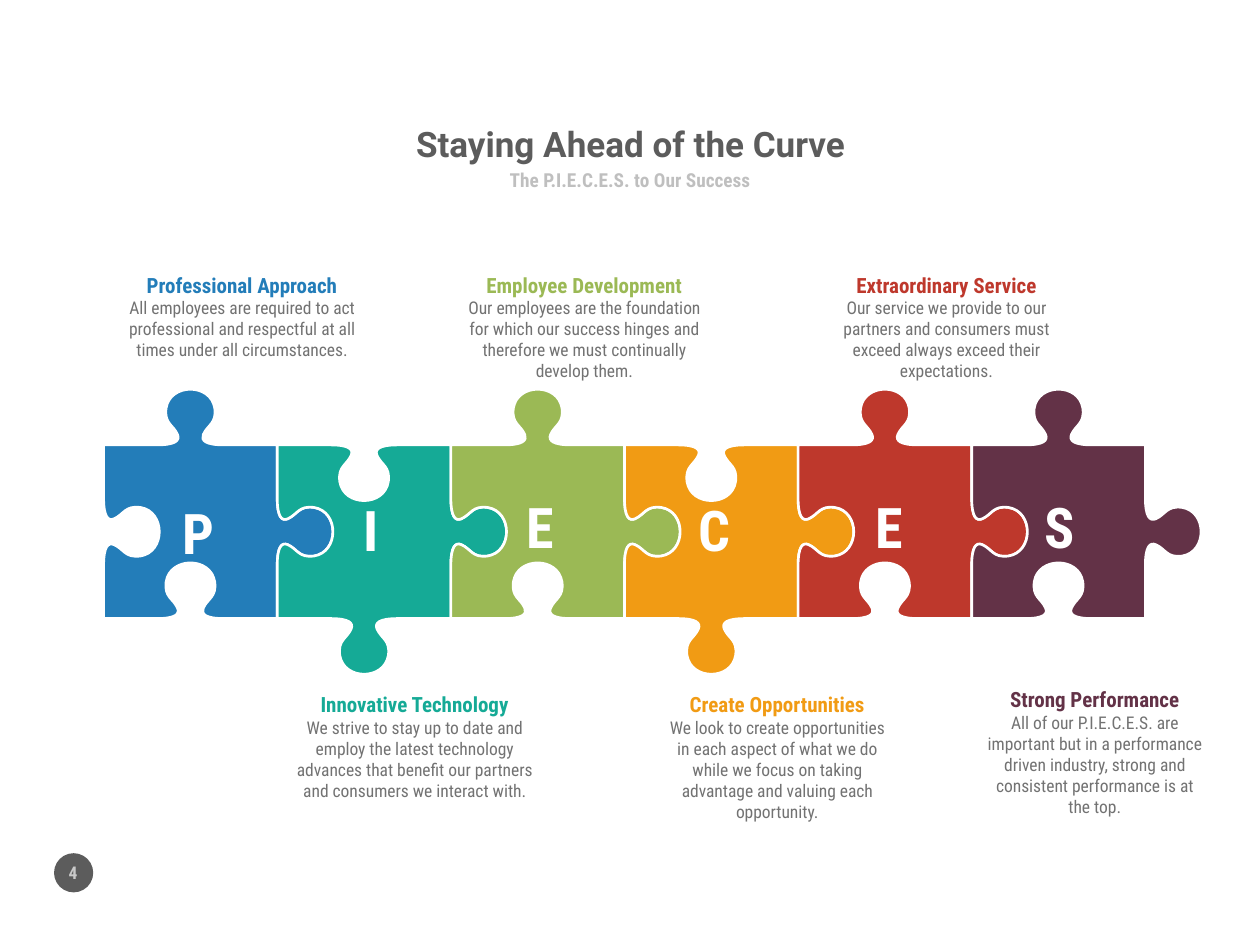
from pptx import Presentation
from pptx.dml.color import RGBColor
from pptx.enum.shapes import MSO_SHAPE
from pptx.enum.text import MSO_ANCHOR, PP_ALIGN
from pptx.oxml.ns import qn
from pptx.util import Cm, Pt

OVAL = MSO_SHAPE.OVAL
CENTER = PP_ALIGN.CENTER
TOP, MIDDLE, BOTTOM = MSO_ANCHOR.TOP, MSO_ANCHOR.MIDDLE, MSO_ANCHOR.BOTTOM

COLORS = {
    "blue": "237DB9", "teal": "15AA96", "green": "9BB955",
    "orange": "F19B14", "red": "BE382C", "plum": "633247",
    "white": "FFFFFF", "title": "5C5C5C", "subtitle": "BFBFBF",
    "body": "727272", "page": "C9C9C9",
}
TITLE_FONT, TEXT_FONT = "Roboto", "Roboto Condensed"

TITLE = "Staying Ahead of the Curve"
SUBTITLE = "The P.I.E.C.E.S. to Our Success"
PAGE = "4"

# letter, colour, knob direction (1 up, -1 down), letter box (left, top),
# caption box (left, top, width, height), heading, description
PIECES = [
    ("P", "blue", 1, (3.61, 10.03), (2.11, 5.36, 5.54, 2.49),
     "Professional Approach",
     "All employees are required to act professional and respectful at all "
     "times under all circumstances."),
    ("I", "teal", -1, (7.09, 9.98), (5.59, 13.82, 5.54, 2.9),
     "Innovative Technology",
     "We strive to stay up to date and employ the latest technology advances "
     "that benefit our partners and consumers we interact with."),
    ("E", "green", 1, (10.5, 9.91), (9.09, 5.36, 5.38, 2.9),
     "Employee Development",
     "Our employees are the foundation for which our success hinges and "
     "therefore we must continually develop them."),
    ("C", "orange", -1, (14, 9.98), (13.18, 13.82, 4.98, 3.33),
     "Create Opportunities",
     "We look to create opportunities in each aspect of what we do while we "
     "focus on taking advantage and valuing each opportunity."),
    ("E", "red", 1, (17.53, 9.91), (16.59, 5.36, 4.98, 2.49),
     "Extraordinary Service",
     "Our service we provide to our partners and consumers must exceed always "
     "exceed their expectations."),
    ("S", "plum", 1, (20.96, 9.91), (19.58, 13.72, 4.98, 2.9),
     "Strong Performance",
     "All of our P.I.E.C.E.S. are important but in a performance driven "
     "industry, strong and consistent performance is at the top."),
]

ROW_LEFT, ROW_TOP, SIDE = 2.09, 8.97, 3.5
LETTER_SIZE = (0.8, 1.37)

# First half of a knob as (distance along the side, height above it): the
# start, two curves of three points each, and the first control of the head
HALF_KNOB = [
    (1.07, 0),
    (1.45, 0), (1.54, 0.09), (1.49, 0.21),
    (1.4, 0.41), (1.22, 0.43), (1.26, 0.74),
    (1.34, 1.25),
]
KNOB = HALF_KNOB + [(SIDE - along, height) for along, height in reversed(HALF_KNOB)]
EDGE = KNOB + [(SIDE, 0)]


def color(name):
    return RGBColor.from_string(COLORS[name])


def bend_knobs(piece):
    """Turn the straight segments of every knob into cubic curves."""
    segments = list(piece._element.iter(qn("a:lnTo")))
    for first in range(0, len(segments), len(EDGE)):
        knob = segments[first + 1:first + len(KNOB)]
        for start in range(0, len(knob), 3):
            curve, *others = knob[start:start + 3]
            bend = curve.makeelement(qn("a:cubicBezTo"))
            curve.addprevious(bend)
            for segment in (curve, *others):
                bend.append(segment[0])
                segment.getparent().remove(segment)


def add_piece(slide, left, direction, fill):
    outline = [(a, -direction * h) for a, h in EDGE]
    outline += [(SIDE + h, a) for a, h in EDGE]
    outline += [(SIDE - a, SIDE - direction * h) for a, h in EDGE]
    outline += [(h, SIDE - a) for a, h in EDGE]
    points = [(Cm(left + x), Cm(ROW_TOP + y)) for x, y in outline]
    builder = slide.shapes.build_freeform(Cm(left), Cm(ROW_TOP))
    builder.add_line_segments(points, close=True)
    piece = builder.convert_to_shape()
    bend_knobs(piece)
    piece.shadow.inherit = False
    piece.fill.solid()
    piece.fill.fore_color.rgb = color(fill)
    piece.line.color.rgb = color("white")
    piece.line.width = Pt(1.5)


def add_text(slide, box, lines, anchor=MIDDLE, wrap=False, inset=None):
    """Each line is (text, size, colour, bold, font) in its own paragraph."""
    frame = slide.shapes.add_textbox(*map(Cm, box)).text_frame
    frame.word_wrap = wrap
    frame.vertical_anchor = anchor
    if inset is not None:
        frame.margin_left = frame.margin_right = Cm(inset)
        frame.margin_top = frame.margin_bottom = Cm(inset)
    for index, (text, size, tint, bold, font) in enumerate(lines):
        paragraph = frame.add_paragraph() if index else frame.paragraphs[0]
        paragraph.alignment = CENTER
        run = paragraph.add_run()
        run.text = text
        run.font.name = font
        run.font.size = Pt(size)
        run.font.bold = bold
        run.font.color.rgb = color(tint)


def main():
    deck = Presentation()
    deck.slide_width, deck.slide_height = Cm(25.4), Cm(19.05)
    slide = deck.slides.add_slide(deck.slide_layouts[6])

    badge = slide.shapes.add_shape(OVAL, Cm(1.09), Cm(17.2), Cm(0.79), Cm(0.79))
    badge.shadow.inherit = False
    badge.fill.solid()
    badge.fill.fore_color.rgb = color("title")
    badge.line.fill.background()

    add_text(slide, (4.88, 2.39, 15.67, 0.99),
             [(TITLE, 20, "title", True, TITLE_FONT)], inset=0)
    add_text(slide, (6.99, 3.35, 11.43, 0.56),
             [(SUBTITLE, 11, "subtitle", True, TEXT_FONT)], inset=0)
    add_text(slide, (0.84, 17.2, 1.27, 0.76),
             [(PAGE, 10, "page", True, TEXT_FONT)], wrap=True)

    for index, piece in enumerate(PIECES):
        letter, tint, direction, corner, caption, heading, description = piece
        add_piece(slide, ROW_LEFT + index * SIDE, direction, tint)
        add_text(slide, corner + LETTER_SIZE,
                 [(letter, 32, "white", True, TEXT_FONT)], BOTTOM, inset=0)
        add_text(slide, caption,
                 [(heading, 12, tint, True, TEXT_FONT),
                  (description, 10, "body", False, TEXT_FONT)], TOP, wrap=True)

    deck.save("out.pptx")


if __name__ == "__main__":
    main()
